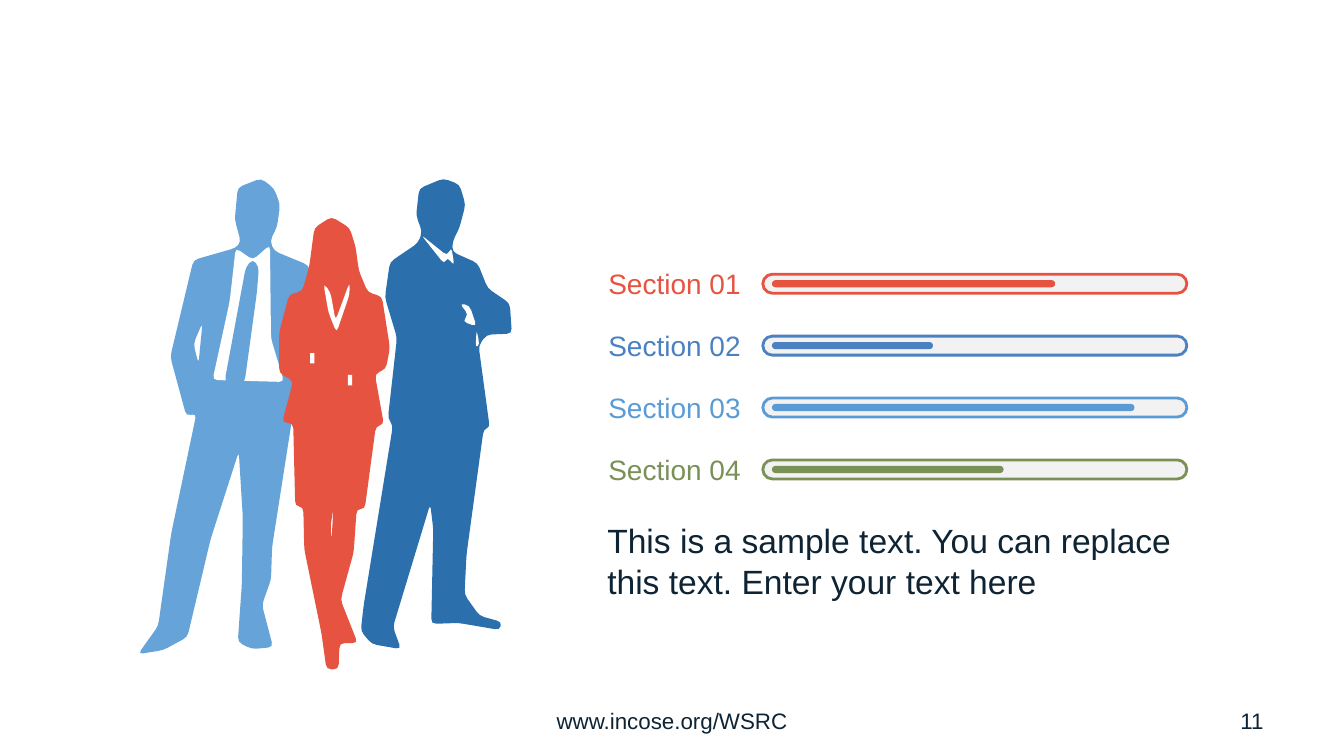
from math import dist

from pptx import Presentation
from pptx.dml.color import RGBColor
from pptx.enum.shapes import MSO_SHAPE as Preset
from pptx.enum.text import MSO_ANCHOR as Anchor, PP_ALIGN as Align
from pptx.util import Cm, Pt

COLORS = {
    "red": "E65341", "blue": "4B80C1", "sky": "5B9BD5", "green": "799056",
    "light_man": "66A3D9", "dark_man": "2B70AC",
    "track": "F2F2F2", "white": "FFFFFF", "ink": "0E2434",
}
FONT = "Arial"
UNIT = Cm(0.0254)  # outline points are hundredths of an inch
CORNER = 5  # how far the corners of an outline are rounded

# Section name, colour, length of the progress bar in cm
SECTIONS = [
    ("Section 01", "red", 7.14),
    ("Section 02", "blue", 4.06),
    ("Section 03", "sky", 9.14),
    ("Section 04", "green", 5.84),
]
ROW_TOP, ROW_PITCH = 6.91, 1.56

# Man on the left
LEFT_BODY = [
    (259, 177), (272, 187), (278, 203), (275, 225), (268, 239), (272, 249), (306, 263), (331, 340),
    (310, 398), (290, 415), (270, 543), (269, 575), (260, 600), (271, 642), (250, 644), (236, 637),
    (240, 580), (241, 514), (237, 448), (209, 535), (186, 632), (162, 645), (137, 649), (157, 621),
    (170, 529), (195, 410), (185, 413), (169, 354), (192, 258), (234, 246), (239, 240), (233, 218),
    (236, 186),
]
LEFT_GAP = [(201, 320), (197, 361), (192, 341)]
LEFT_SHIRT = [(268, 243), (269, 336), (282, 379), (211, 377), (228, 299), (234, 246), (251, 258)]
LEFT_TIE = [(251, 257), (244, 265), (223, 378), (232, 393), (243, 378), (255, 290), (257, 265)]

# Man on the right
RIGHT_BODY = [
    (440, 177), (456, 183), (462, 203), (456, 226), (449, 240), (449, 250), (474, 261), (484, 286),
    (506, 301), (508, 331), (483, 332), (475, 343), (486, 424), (480, 426), (463, 550), (461, 590),
    (476, 611), (498, 617), (496, 625), (455, 618), (428, 619), (430, 525), (427, 500), (390, 622),
    (398, 644), (369, 639), (358, 626), (361, 600), (390, 422), (385, 415), (394, 335), (382, 295),
    (387, 260), (415, 241), (419, 230), (413, 214), (416, 187),
]
RIGHT_COLLAR = [(418, 233), (444, 254), (448, 245), (451, 264), (444, 255), (441, 262)]
RIGHT_HAND = [(459, 319), (465, 312), (456, 301), (466, 303), (473, 324)]
RIGHT_SLEEVE = [(473, 327), (476, 342), (472, 345)]

# Woman in front
WOMAN_BODY = [
    (329, 215), (347, 226), (353, 245), (356, 268), (365, 290), (379, 294), (387, 345), (383, 366),
    (372, 371), (381, 421), (373, 423), (362, 505), (354, 505), (351, 548), (338, 595), (355, 638),
    (337, 638), (336, 664), (324, 664), (319, 628), (302, 545), (301, 503), (293, 502), (291, 420),
    (280, 419), (291, 378), (277, 370), (277, 330), (287, 292), (300, 289), (307, 264), (312, 226),
]
LEG_GAP = [(331, 504), (328, 522), (329, 536)]
WOMAN_COLLAR = [(321, 281), (328, 290), (333, 318), (347, 280), (347, 292), (334, 330), (326, 310)]

# Back to front: colour and contours of each silhouette part
SILHOUETTES = [
    ("light_man", [LEFT_BODY, LEFT_GAP]), ("white", [LEFT_SHIRT]), ("light_man", [LEFT_TIE]),
    ("dark_man", [RIGHT_BODY]), ("white", [RIGHT_COLLAR]), ("white", [RIGHT_HAND]),
    ("white", [RIGHT_SLEEVE]), ("red", [WOMAN_BODY, LEG_GAP]), ("white", [WOMAN_COLLAR]),
]
# Left and top of the woman's cuffs, in cm
CUFFS = [(7.82, 8.9), (8.77, 9.45)]


def rgb(color):
    return RGBColor.from_string(COLORS[color])


def paint(shape, fill, line=None):
    shape.shadow.inherit = False
    shape.fill.solid()
    shape.fill.fore_color.rgb = rgb(fill)
    if line:
        shape.line.color.rgb = rgb(line)
        shape.line.width = Pt(2)
    else:
        shape.line.fill.background()


def between(start, end, share):
    return tuple(a + (b - a) * share for a, b in zip(start, end))


def round_corners(points):
    rounded = []
    for before, corner, after in zip(points[-1:] + points, points, points[1:] + points[:1]):
        entry, leave = (between(corner, other, min(0.5, CORNER / dist(corner, other)))
                        for other in (before, after))
        middle = between(between(entry, leave, 0.5), corner, 0.5)
        rounded += [entry, middle, leave]
    return rounded


def add_silhouette(slide, color, contours):
    # Fine units keep the rounded corners smooth
    outlines = [[(x * 100, y * 100) for x, y in round_corners(contour)] for contour in contours]
    builder = slide.shapes.build_freeform(*outlines[0][0], scale=UNIT / 100)
    builder.add_line_segments(outlines[0][1:], close=True)
    for outline in outlines[1:]:
        builder.move_to(*outline[0])
        builder.add_line_segments(outline[1:], close=True)
    paint(builder.convert_to_shape(), color)


def add_box(slide, preset, left, top, width, height, fill, line=None):
    shape = slide.shapes.add_shape(preset, Cm(left), Cm(top), Cm(width), Cm(height))
    paint(shape, fill, line)
    return shape


def add_pill(slide, *box):
    add_box(slide, Preset.ROUNDED_RECTANGLE, *box).adjustments[0] = 0.5


def add_text(slide, text, left, top, width, height, size, color="ink",
             align=Align.LEFT, anchor=Anchor.MIDDLE, wrap=True):
    box = slide.shapes.add_textbox(Cm(left), Cm(top), Cm(width), Cm(height))
    frame = box.text_frame
    frame.word_wrap = wrap
    frame.vertical_anchor = anchor
    paragraph = frame.paragraphs[0]
    paragraph.alignment = align
    run = paragraph.add_run()
    run.text = text
    run.font.name = FONT
    run.font.size = Pt(size)
    run.font.color.rgb = rgb(color)
    return frame


def add_section(slide, top, name, color, progress):
    add_pill(slide, 19.23, top, 10.69, 0.48, "track", color)
    add_pill(slide, 19.46, top + 0.15, progress, 0.18, color)
    add_text(slide, name, 15.06, top - 0.31, 3.89, 1.12, 20, color, Align.CENTER, Anchor.TOP, wrap=False)


def add_footer(slide, text, left, width, align):
    frame = add_text(slide, text, left, 17.65, width, 1.02, 16, align=align)
    frame.margin_left = frame.margin_right = Cm(0.33)
    frame.margin_top = frame.margin_bottom = Cm(0.18)


def main():
    presentation = Presentation()
    presentation.slide_width, presentation.slide_height = Cm(33.88), Cm(19.05)
    slide = presentation.slides.add_slide(presentation.slide_layouts[6])

    # Business team
    for color, contours in SILHOUETTES:
        add_silhouette(slide, color, contours)
    for left, top in CUFFS:
        add_box(slide, Preset.RECTANGLE, left, top, 0.11, 0.26, "white")

    # Progress of the sections
    for row, section in enumerate(SECTIONS):
        add_section(slide, ROW_TOP + row * ROW_PITCH, *section)

    # Description and footer
    add_text(slide, "This is a sample text. You can replace this text. Enter your text here",
             15.06, 13.44, 14.86, 1.37, 24)
    add_footer(slide, "www.incose.org/WSRC", 11.58, 10.72, Align.CENTER)
    add_footer(slide, "11", 24.28, 7.9, Align.RIGHT)

    presentation.save("out.pptx")


if __name__ == "__main__":
    main()
